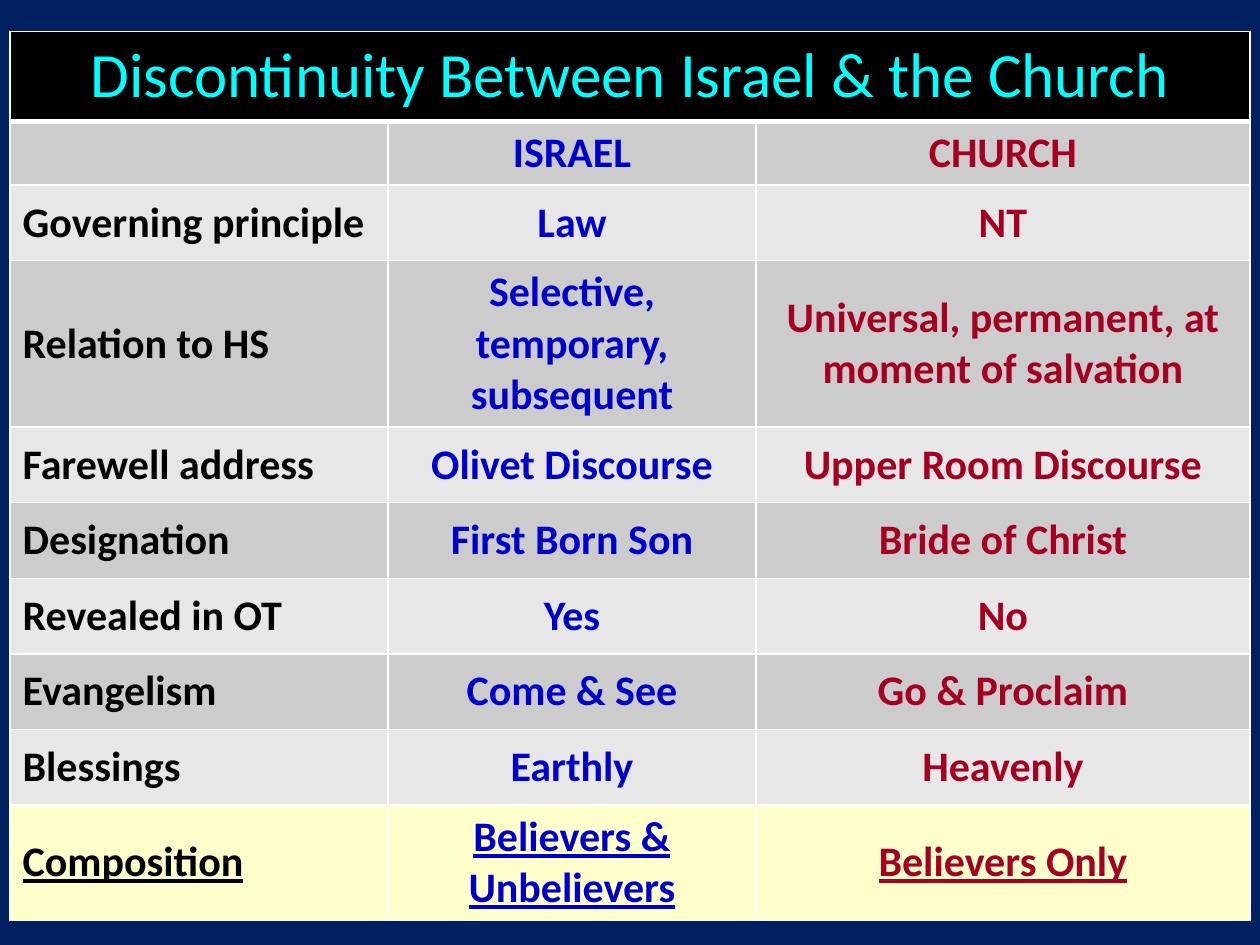
from lxml import etree
from pptx import Presentation
from pptx.dml.color import RGBColor
from pptx.enum.text import MSO_ANCHOR, PP_ALIGN
from pptx.oxml.ns import qn
from pptx.util import Inches, Pt

LEFT, CENTER = PP_ALIGN.LEFT, PP_ALIGN.CENTER
MIDDLE = MSO_ANCHOR.MIDDLE
BLACK, WHITE, BLUE, RED = "000000", "FFFFFF", "0000CC", "A50021"
DARK_BAND, LIGHT_BAND, HIGHLIGHT = "CCCCCC", "E7E7E7", "FFFFCC"

COLUMN_WIDTHS = [3, 2.92, 3.92]
ROW_HEIGHTS = [0.7, 0.5, 0.6, 0.7, 0.6, 0.6, 0.6, 0.6, 0.6, 0.7]
COLUMN_STYLES = [(BLACK, LEFT), (BLUE, CENTER), (RED, CENTER)]
TITLE = "Discontinuity Between Israel & the Church"
COMPARISON = [
    ("", "ISRAEL", "CHURCH"),
    ("Governing principle", "Law", "NT"),
    ("Relation to HS", "Selective, temporary, subsequent",
     "Universal, permanent, at moment of salvation"),
    ("Farewell address", "Olivet Discourse", "Upper Room Discourse"),
    ("Designation", "First Born Son", "Bride of Christ"),
    ("Revealed in OT", "Yes", "No"),
    ("Evangelism", "Come & See", "Go & Proclaim"),
    ("Blessings", "Earthly", "Heavenly"),
    ("Composition", "Believers & Unbelievers", "Believers Only"),
]


def write_cell(cell, text, *, color, size=24, bold=True, underline=False, align=CENTER):
    cell.vertical_anchor = MIDDLE
    para = cell.text_frame.paragraphs[0]
    para.alignment = align
    if not text:
        return
    span = para.add_run()
    span.text = text
    span.font.name = "Calibri"
    span.font.size = Pt(size)
    span.font.bold = bold
    span.font.underline = underline
    span.font.color.rgb = RGBColor.from_string(color)


def paint_cell(cell, fill, top=1, bottom=1):
    properties = cell._tc.get_or_add_tcPr()
    for side, width in (("L", 1), ("R", 1), ("T", top), ("B", bottom)):
        line = etree.SubElement(properties, qn(f"a:ln{side}"), w=str(Pt(width)))
        solid = etree.SubElement(line, qn("a:solidFill"))
        etree.SubElement(solid, qn("a:srgbClr"), val=WHITE)
    cell.fill.solid()
    cell.fill.fore_color.rgb = RGBColor.from_string(fill)


deck = Presentation()
deck.slide_width, deck.slide_height = Inches(10), Inches(7.5)
page = deck.slides.add_slide(deck.slide_layouts[6])
page.background.fill.solid()
page.background.fill.fore_color.rgb = RGBColor.from_string("002060")

frame = page.shapes.add_table(
    len(ROW_HEIGHTS), len(COLUMN_WIDTHS),
    Inches(0.08), Inches(0.25), Inches(sum(COLUMN_WIDTHS)), Inches(7))
table = frame.table
for column, width in zip(table.columns, COLUMN_WIDTHS):
    column.width = Inches(width)
for row, height in zip(table.rows, ROW_HEIGHTS):
    row.height = Inches(height)
frame.height = Inches(7)

table.cell(0, 0).merge(table.cell(0, 2))
write_cell(table.cell(0, 0), TITLE, color="00FFFF", size=36, bold=False)
for cell in table.rows[0].cells:
    paint_cell(cell, BLACK, bottom=3)

last = len(COMPARISON)
for index, texts in enumerate(COMPARISON, start=1):
    band = DARK_BAND if index % 2 else LIGHT_BAND
    fill = HIGHLIGHT if index == last else band
    for cell, text, (color, align) in zip(table.rows[index].cells, texts, COLUMN_STYLES):
        write_cell(cell, text, color=color, align=align, underline=index == last)
        paint_cell(cell, fill, top=3 if index == 1 else 1)

deck.save("out.pptx")
